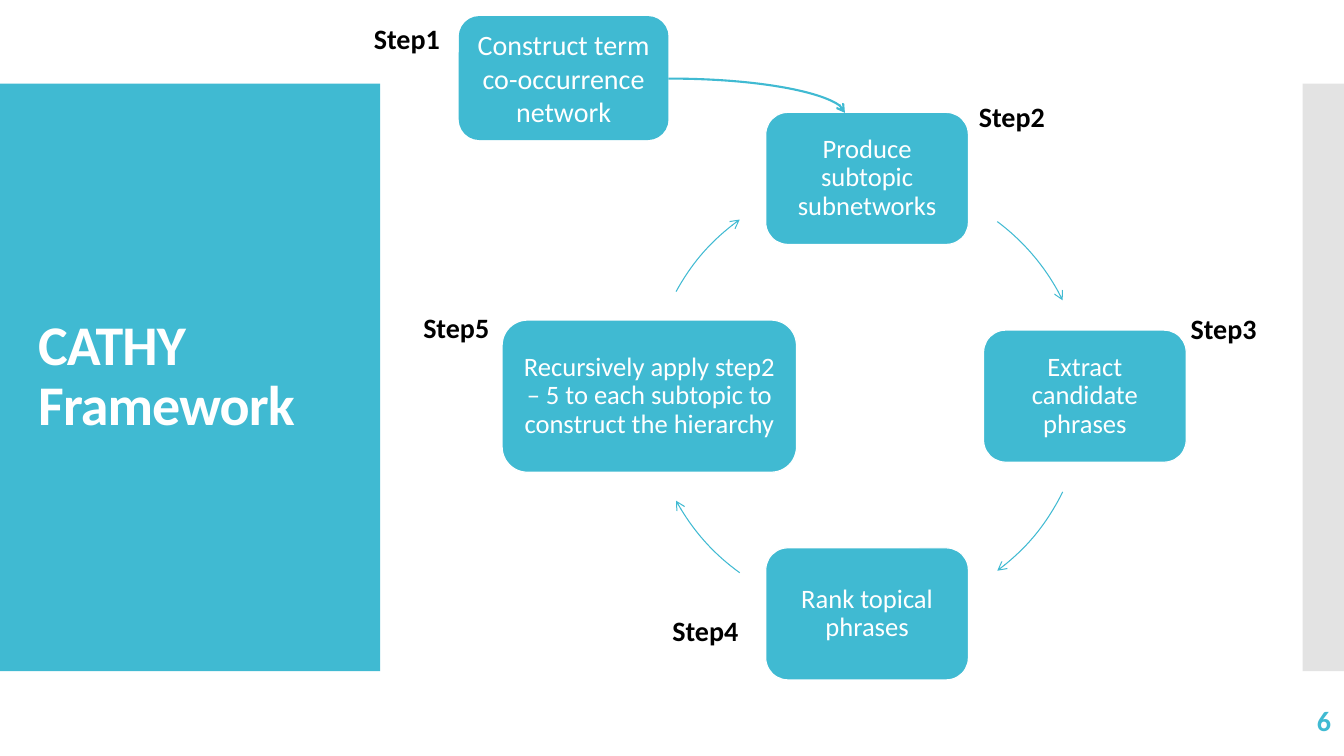
"""Builds the CATHY framework slide: a starting step feeding a four-step cycle."""
from lxml import etree
from pptx import Presentation
from pptx import util as u
from pptx.dml.color import RGBColor
from pptx.enum import shapes, text
from pptx.oxml import ns

TEAL = RGBColor(0x40, 0xBA, 0xD2)
GREY = RGBColor(0xE3, 0xE3, 0xE3)
WHITE = RGBColor(0xFF, 0xFF, 0xFF)
BLACK = RGBColor(0, 0, 0)

TITLE = "CATHY\vFramework"
PAGE = "6"
PANELS = [((0, 0.83, 3.77, 5.83), TEAL), ((12.92, 0.83, 0.41, 5.83), GREY)]
START = ("Construct term co-occurrence network", (4.55, 0.16, 2.08, 1.23))
CENTRE, RADIUS = (8.6, 3.93), 2.16
CYCLE = [
    ("Produce subtopic subnetworks", (0, -1), (2.01, 1.31)),
    ("Extract candidate phrases", (1, 0), (2.01, 1.31)),
    ("Rank topical phrases", (0, 1), (2.01, 1.31)),
    ("Recursively apply step2 – 5 to each subtopic to construct the hierarchy",
     (-1, 0), (2.92, 1.51)),
]
ARROW_ANGLES = [(306.7, 333.9), (26.1, 53.3), (125.8, 151.3), (208.7, 234.2)]
ENTRY = ((6.63, 0.78), (8.38, 1.12))
STEP_PLACES = [(3.61, 0.16), (9.61, 0.94), (11.71, 3.04), (6.57, 6.04), (4.1, 3.03)]
STEP_SIZE = (0.94, 0.44)

LEFT, MIDDLE, RIGHT = text.PP_ALIGN.LEFT, text.PP_ALIGN.CENTER, text.PP_ALIGN.RIGHT
STEP_FONT = {"size": u.Pt(20), "bold": True}
CYCLE_MARGINS = {f"margin_{side}": u.Inches(0.08)
                 for side in ("left", "right", "top", "bottom")}


def apply(target, values):
    for name, value in values.items():
        setattr(target, name, value)


def write(shape, words, colour, font, align=LEFT, spacing=1.0, frame=None):
    apply(shape.text_frame, {"word_wrap": True,
                             "vertical_anchor": text.MSO_ANCHOR.MIDDLE, **(frame or {})})
    paragraph = shape.text_frame.paragraphs[0]
    paragraph.text = words
    apply(paragraph, {"alignment": align, "line_spacing": spacing})
    for run in paragraph.runs:
        apply(run.font, {"name": "Calibri", **font})
        run.font.color.rgb = colour
    return paragraph


def add_block(slide, kind, place, colour):
    block = slide.shapes.add_shape(kind, *map(u.Inches, place))
    block.shadow.inherit = False
    block.fill.solid()
    block.fill.fore_color.rgb = colour
    block.line.fill.background()
    return block


def add_label(slide, place):
    return slide.shapes.add_textbox(*map(u.Inches, place))


def draw_arrow(arrow, width):
    arrow.line.color.rgb = TEAL
    arrow.line.width = u.Pt(width)
    outline = arrow.element.spPr.find(ns.qn("a:ln"))
    etree.SubElement(outline, ns.qn("a:tailEnd"), type="arrow")


def add_cycle(slide):
    for (words, (across, down), (width, height)), angles in zip(CYCLE, ARROW_ANGLES):
        place = (CENTRE[0] + across * RADIUS - width / 2,
                 CENTRE[1] + down * RADIUS - height / 2, width, height)
        step = add_block(slide, shapes.MSO_SHAPE.ROUNDED_RECTANGLE, place, TEAL)
        step.line.color.rgb = WHITE
        step.line.width = u.Pt(0.85)
        write(step, words, WHITE, {"size": u.Pt(19)}, MIDDLE, 0.9, CYCLE_MARGINS)

        ring = (CENTRE[0] - RADIUS, CENTRE[1] - RADIUS, 2 * RADIUS, 2 * RADIUS)
        arc = slide.shapes.add_shape(shapes.MSO_SHAPE.ARC, *map(u.Inches, ring))
        arc.shadow.inherit = False
        arc.fill.background()
        for index, angle in enumerate(angles):
            arc.adjustments[index] = angle * 0.6
        draw_arrow(arc, 0.75)


def add_entry(slide):
    (x1, y1), (x2, y2) = ENTRY
    entry = slide.shapes.add_connector(shapes.MSO_CONNECTOR.CURVE,
                                       *map(u.Inches, (x1, y1, x2, y2)))
    properties = entry.element.spPr
    properties.find(ns.qn("a:prstGeom")).set("prst", "curvedConnector2")
    draw_arrow(entry, 1.5)
    etree.SubElement(properties, ns.qn("a:effectLst"))


def main():
    deck = Presentation()
    apply(deck, {"slide_width": u.Inches(13.33), "slide_height": u.Inches(7.5)})
    slide = deck.slides.add_slide(deck.slide_layouts[6])

    for place, colour in PANELS:
        add_block(slide, shapes.MSO_SHAPE.RECTANGLE, place, colour)
    title = write(add_label(slide, (0.28, 1.23, 3.22, 5.03)), TITLE, WHITE,
                  {"size": u.Pt(40), "bold": True}, spacing=0.9)
    for run in title.runs:
        run.font._element.set("spc", "-60")

    add_cycle(slide)
    write(add_label(slide, (11.63, 6.95, 1.67, 0.4)), PAGE, TEAL, STEP_FONT, RIGHT)
    for number, place in enumerate(STEP_PLACES, 1):
        write(add_label(slide, place + STEP_SIZE), f"Step{number}", BLACK, STEP_FONT,
              frame={"word_wrap": False, "vertical_anchor": text.MSO_ANCHOR.TOP})

    words, place = START
    start = add_block(slide, shapes.MSO_SHAPE.ROUNDED_RECTANGLE, place, TEAL)
    write(start, words, WHITE, {"size": u.Pt(20)}, MIDDLE)
    add_entry(slide)
    deck.save("out.pptx")


if __name__ == "__main__":
    main()
